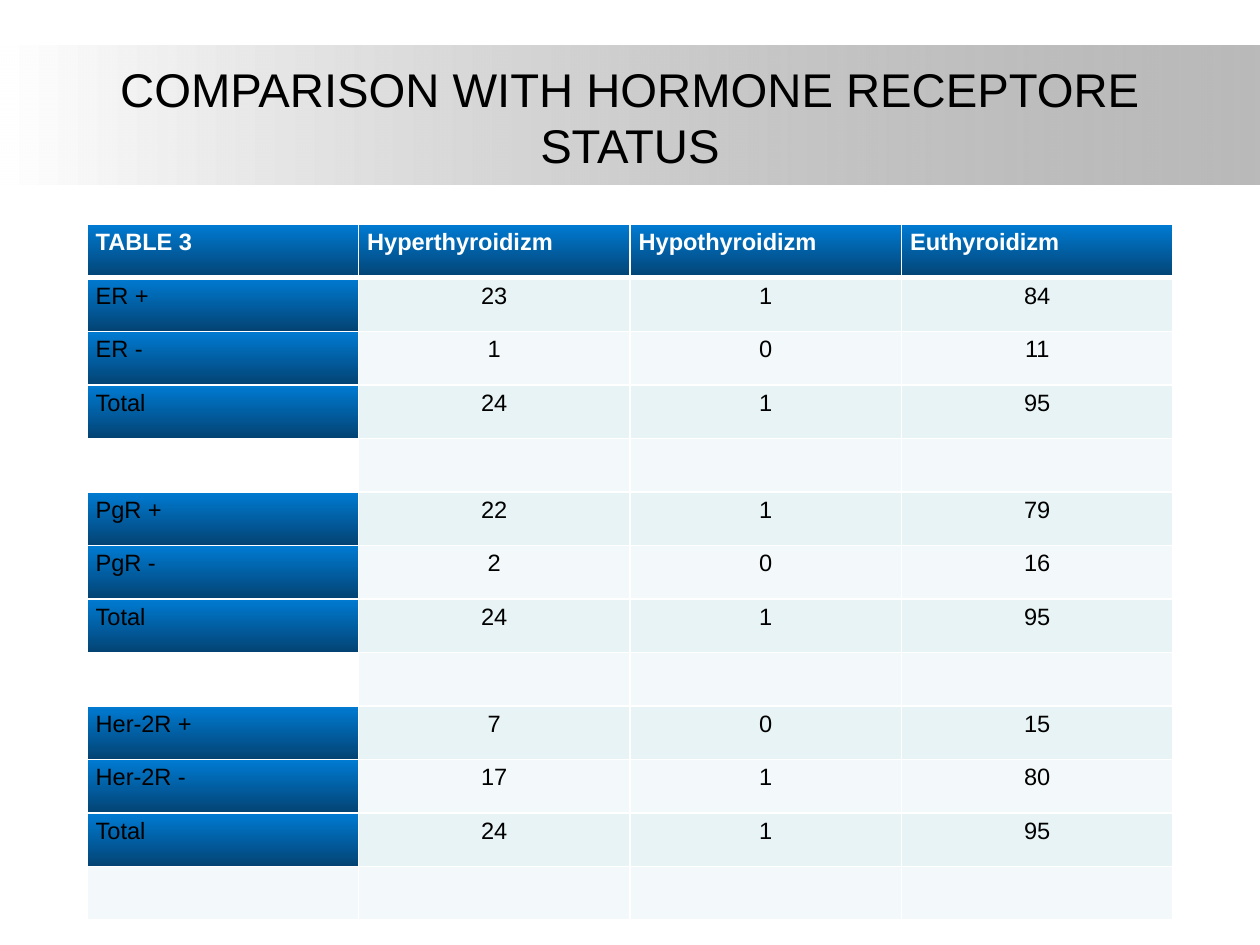
from lxml import etree
from pptx import Presentation
from pptx import util as u
from pptx.dml.color import RGBColor
from pptx.enum import shapes, text
from pptx.oxml import ns

COLORS = {
    "white": "FFFFFF",
    "black": "000000",
    "grey": "808080",
    "blue": "007BD3",
    "navy": "034373",
    "odd": "E7F3F4",
    "even": "F3F9FA",
}

HEADER = ["TABLE 3", "Hyperthyroidizm", "Hypothyroidizm", "Euthyroidizm"]
BLANK = ["", "", "", ""]
RECEPTORS = {
    "ER": ([23, 1, 84], [1, 0, 11]),
    "PgR": ([22, 1, 79], [2, 0, 16]),
    "Her-2R": ([7, 0, 15], [17, 1, 80]),
}


def receptor_rows():
    rows = [HEADER]
    for receptor, (positive, negative) in RECEPTORS.items():
        total = [sum(pair) for pair in zip(positive, negative)]
        rows += [
            [f"{receptor} +", *positive],
            [f"{receptor} -", *negative],
            ["Total", *total],
            BLANK,
        ]
    return rows


class SlideBuilder:
    font = "Arial"
    title_size = 27
    table_size = 13.5

    def __init__(self, presentation):
        self.width = presentation.slide_width
        self.height = presentation.slide_height
        self.slide = presentation.slides.add_slide(presentation.slide_layouts[6])

    def box(self, left, top, width, height):
        return (
            round(left * self.width),
            round(top * self.height),
            round(width * self.width),
            round(height * self.height),
        )

    def color(self, name):
        return RGBColor.from_string(COLORS[name])

    def style(self, paragraph, size, color, bold=False, centered=False):
        if centered:
            paragraph.alignment = text.PP_ALIGN.CENTER
        for run in paragraph.runs:
            run.font.name = self.font
            run.font.size = u.Pt(size)
            run.font.bold = bold
            run.font.color.rgb = self.color(color)

    def gradient(self, fill, names, angle):
        fill.gradient()
        fill.gradient_angle = angle
        for stop, name, position in zip(fill.gradient_stops, names, (0, 1)):
            stop.color.rgb = self.color(name)
            stop.position = position

    def band(self, area, names, opacity):
        shape = self.slide.shapes.add_shape(
            shapes.MSO_SHAPE.RECTANGLE, *self.box(*area))
        shape.shadow.inherit = False
        shape.line.fill.background()
        self.gradient(shape.fill, names, 0)
        last_color = shape.element.findall(".//" + ns.qn("a:srgbClr"))[-1]
        etree.SubElement(last_color, ns.qn("a:alpha"), val=str(opacity * 1000))

    def title(self, area, wording):
        frame = self.slide.shapes.add_textbox(*self.box(*area)).text_frame
        frame.word_wrap = True
        frame.vertical_anchor = text.MSO_ANCHOR.MIDDLE
        frame.text = wording
        self.style(frame.paragraphs[0], self.title_size, "black", centered=True)

    def border(self, cell, side, points):
        properties = cell._tc.get_or_add_tcPr()
        line = etree.SubElement(
            properties, ns.qn(f"a:ln{side}"), w=str(u.Pt(points)))
        fill = etree.SubElement(line, ns.qn("a:solidFill"))
        etree.SubElement(fill, ns.qn("a:srgbClr"), val=COLORS["white"])

    def cell(self, cell, value, row, column):
        header = row == 0
        cell.margin_left = cell.margin_right = u.Inches(0.07)
        cell.margin_top = cell.margin_bottom = u.Inches(0.04)
        for side in "LRTB":
            thick = (row, side) in ((0, "B"), (1, "T"))
            self.border(cell, side, 3 if thick else 1)
        cell.text_frame.text = str(value)
        self.style(cell.text_frame.paragraphs[0], self.table_size,
                   "white" if header else "black",
                   bold=header, centered=not header and column > 0)
        return cell

    def table(self, area, rows):
        frame = self.slide.shapes.add_table(
            len(rows), len(rows[0]), *self.box(*area))
        for row, values in enumerate(rows):
            for column, value in enumerate(values):
                cell = self.cell(
                    frame.table.cell(row, column), value, row, column)
                if row == 0 or (column == 0 and value):
                    self.gradient(cell.fill, ("blue", "navy"), 270)
                    continue
                gap = column == 0 and row < len(rows) - 1
                cell.fill.solid()
                cell.fill.fore_color.rgb = self.color(
                    "white" if gap else "odd" if row % 2 else "even")


def main():
    presentation = Presentation()
    presentation.slide_width = u.Inches(10)
    presentation.slide_height = u.Inches(7.5)
    builder = SlideBuilder(presentation)
    builder.band((0, 0.048, 1, 0.147), ("white", "grey"), 54)
    builder.title((0.05, 0.04, 0.9, 0.167),
                  "COMPARISON WITH HORMONE RECEPTORE STATUS")
    builder.table((0.069, 0.2373, 0.862, 0.737), receptor_rows())
    presentation.save("out.pptx")


if __name__ == "__main__":
    main()
